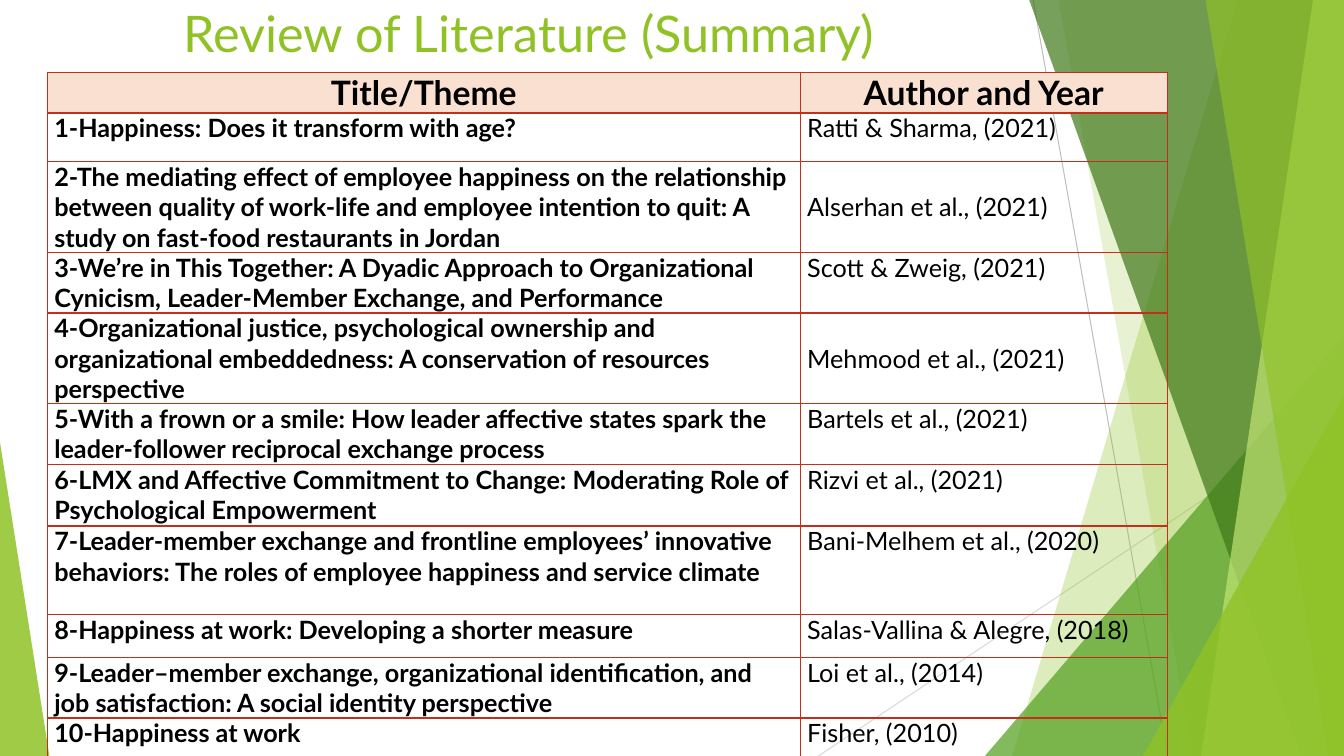
from dataclasses import dataclass

import pptx
import pptx.dml.color
import pptx.enum.shapes
import pptx.enum.text
import pptx.oxml
import pptx.oxml.ns
import pptx.util
from lxml import etree

Pt = pptx.util.Pt
RGBColor = pptx.dml.color.RGBColor
Anchor = pptx.enum.text.MSO_ANCHOR
Align = pptx.enum.text.PP_ALIGN

WIDTH, HEIGHT, TOP = 960, 540, -0.6
FONT = "Lato"
LEAF = RGBColor(0x90, 0xC2, 0x26)
GRASS = RGBColor(0x54, 0xA0, 0x21)
FOREST = RGBColor(0x3F, 0x78, 0x19)
LIME = RGBColor(0xC0, 0xE4, 0x74)
GREY = RGBColor(0xBF, 0xBF, 0xBF)
LIGHT_GREY = RGBColor(0xD9, 0xD9, 0xD9)
BLACK = RGBColor(0, 0, 0)
BORDER = RGBColor(0xC4, 0x2F, 0x1A)
HEADER_FILL = RGBColor(0xFA, 0xE0, 0xD1)


@dataclass(frozen=True)
class Ray:
    start: tuple[float, float]
    end: tuple[float, float]
    color: RGBColor


@dataclass(frozen=True)
class Band:
    """A panel reaching the right edge of the slide, with a slanted left side."""
    top_left: float
    bottom_left: float
    color: RGBColor
    opacity: int


@dataclass(frozen=True)
class Wedge:
    """A right-angled triangle standing on the bottom edge of the slide."""
    left: float
    top: float
    width: float
    apex: float
    color: RGBColor
    opacity: int


@dataclass(frozen=True)
class Study:
    title: str
    author: str
    height: float
    author_anchor: Anchor = Anchor.TOP


RAYS = [
    Ray((738, 0), (834, HEIGHT), GREY),
    Ray((WIDTH, 290), (584.6, HEIGHT), LIGHT_GREY),
]
FACETS = [
    Band(884, 723, LEAF, 30),
    Band(756, 852, LEAF, 20),
    Wedge(703.5, 240, 256.5, 1, GRASS, 72),
    Band(735, 929.5, FOREST, 70),
    Band(938, 858, LIME, 70),
    Band(861, 949, LEAF, 65),
    Wedge(816.5, 283, 143.5, 1, LEAF, 80),
    Wedge(0, 316, 35.3, 0, LEAF, 85),
]
COLUMN_WIDTHS = (537.8, 262.1)
HEADINGS = ("Title/Theme", "Author and Year")
HEADER_HEIGHT = 29.2
STUDIES = [
    Study("1-Happiness: Does it transform with age?", "Ratti & Sharma, (2021)", 34.8),
    Study("2-The mediating effect of employee happiness on the relationship between quality of "
          "work-life and employee intention to quit: A study on fast-food restaurants in Jordan",
          "Alserhan et al., (2021)", 64.8, Anchor.MIDDLE),
    Study("3-We’re in This Together: A Dyadic Approach to Organizational Cynicism, "
          "Leader-Member Exchange, and Performance", "Scott & Zweig, (2021)", 43.2),
    Study("4-Organizational justice, psychological ownership and organizational embeddedness: "
          "A conservation of resources perspective",
          "Mehmood et al., (2021)", 64.8, Anchor.MIDDLE),
    Study("5-With a frown or a smile: How leader affective states spark the leader-follower "
          "reciprocal exchange process", "Bartels et al., (2021)", 43.2),
    Study("6-LMX and Affective Commitment to Change: Moderating Role of Psychological "
          "Empowerment", "Rizvi et al., (2021)", 44),
    Study("7-Leader-member exchange and frontline employees’ innovative behaviors: The roles "
          "of employee happiness and service climate", "Bani-Melhem et al., (2020)", 63),
    Study("8-Happiness at work: Developing a shorter measure",
          "Salas-Vallina & Alegre, (2018)", 31),
    Study("9-Leader–member exchange, organizational identification, and job satisfaction: "
          "A social identity perspective", "Loi et al., (2014)", 43.2),
    Study("10-Happiness at work", "Fisher, (2010)", 36),
]


def draw_ray(slide: pptx.slide.Slide, ray: Ray) -> None:
    connector = slide.shapes.add_connector(
        pptx.enum.shapes.MSO_CONNECTOR.STRAIGHT, *map(Pt, ray.start + ray.end))
    connector.line.color.rgb = ray.color
    connector.line.width = Pt(0.75)
    etree.SubElement(connector.element.spPr, pptx.oxml.ns.qn("a:effectLst"))


def draw_facet(slide: pptx.slide.Slide, facet: Band | Wedge) -> None:
    if isinstance(facet, Band):
        builder = slide.shapes.build_freeform(Pt(facet.top_left), Pt(TOP))
        corners = [(WIDTH, TOP), (WIDTH, HEIGHT), (facet.bottom_left, HEIGHT)]
        builder.add_line_segments([(Pt(x), Pt(y)) for x, y in corners], close=True)
        shape = builder.convert_to_shape()
    else:
        shape = slide.shapes.add_shape(
            pptx.enum.shapes.MSO_SHAPE.ISOSCELES_TRIANGLE, Pt(facet.left), Pt(facet.top),
            Pt(facet.width), Pt(HEIGHT - facet.top))
        shape.adjustments[0] = facet.apex
    shape.shadow.inherit = False
    shape.line.fill.background()
    shape.fill.solid()
    shape.fill.fore_color.rgb = facet.color
    color = shape.element.spPr.find(".//" + pptx.oxml.ns.qn("a:srgbClr"))
    etree.SubElement(color, pptx.oxml.ns.qn("a:alpha"), val=str(facet.opacity * 1000))


def draw_title(slide: pptx.slide.Slide) -> None:
    title = slide.shapes.title
    title.left, title.top, title.width, title.height = map(Pt, (123.8, -2.2, 676.8, 103.7))
    title.element.getparent().append(title.element)
    frame = title.text_frame
    frame.text = "Review of Literature (Summary)"
    frame.auto_size = pptx.enum.text.MSO_AUTO_SIZE.NONE
    frame.vertical_anchor = Anchor.TOP
    paragraph = frame.paragraphs[0]
    paragraph.alignment = Align.LEFT
    paragraph.font.name, paragraph.font.size = FONT, Pt(36)
    paragraph.font.color.rgb = LEAF


def set_borders(cell: pptx.table._Cell, top: float, bottom: float) -> None:
    properties = cell._tc.get_or_add_tcPr()
    for index, (side, width) in enumerate(zip("LRTB", (1, 1, top, bottom))):
        properties.insert(index, pptx.oxml.parse_xml(
            f'<a:ln{side} {pptx.oxml.ns.nsdecls("a")} w="{Pt(width)}"><a:solidFill>'
            f'<a:srgbClr val="{BORDER}"/></a:solidFill></a:ln{side}>'))


def fill_cell(cell: pptx.table._Cell, text: str, size: int, bold: bool,
              alignment: Align, anchor: Anchor) -> None:
    cell.text = text
    cell.margin_left = cell.margin_right = Pt(5)
    cell.margin_top = cell.margin_bottom = 0
    cell.vertical_anchor = anchor
    paragraph = cell.text_frame.paragraphs[0]
    paragraph.alignment = alignment
    font = paragraph.font
    font.name, font.size, font.bold = FONT, Pt(size), bold
    font.color.rgb = BLACK


def draw_table(slide: pptx.slide.Slide) -> None:
    heights = [HEADER_HEIGHT] + [study.height for study in STUDIES]
    table = slide.shapes.add_table(
        len(heights), len(COLUMN_WIDTHS), Pt(33.8), Pt(51.6),
        Pt(sum(COLUMN_WIDTHS)), Pt(sum(heights))).table
    table.horz_banding = False
    for column, width in zip(table.columns, COLUMN_WIDTHS):
        column.width = Pt(width)
    for row, height in zip(table.rows, heights):
        row.height = Pt(height)
    for cell, heading in zip(table.rows[0].cells, HEADINGS):
        fill_cell(cell, heading, 24, True, Align.CENTER, Anchor.TOP)
        cell.fill.solid()
        cell.fill.fore_color.rgb = HEADER_FILL
        set_borders(cell, 1, 2)
    for index, study in enumerate(STUDIES, start=1):
        title, author = table.rows[index].cells
        fill_cell(title, study.title, 18, True, Align.LEFT, Anchor.TOP)
        fill_cell(author, study.author, 18, False, Align.LEFT, study.author_anchor)
        for cell in (title, author):
            cell.fill.background()
            set_borders(cell, 2 if index == 1 else 1, 1)


def main() -> None:
    presentation = pptx.Presentation()
    presentation.slide_width, presentation.slide_height = Pt(WIDTH), Pt(HEIGHT)
    slide = presentation.slides.add_slide(presentation.slide_layouts.get_by_name("Title Only"))
    for ray in RAYS:
        draw_ray(slide, ray)
    for facet in FACETS:
        draw_facet(slide, facet)
    draw_title(slide)
    draw_table(slide)
    presentation.save("out.pptx")


if __name__ == "__main__":
    main()
